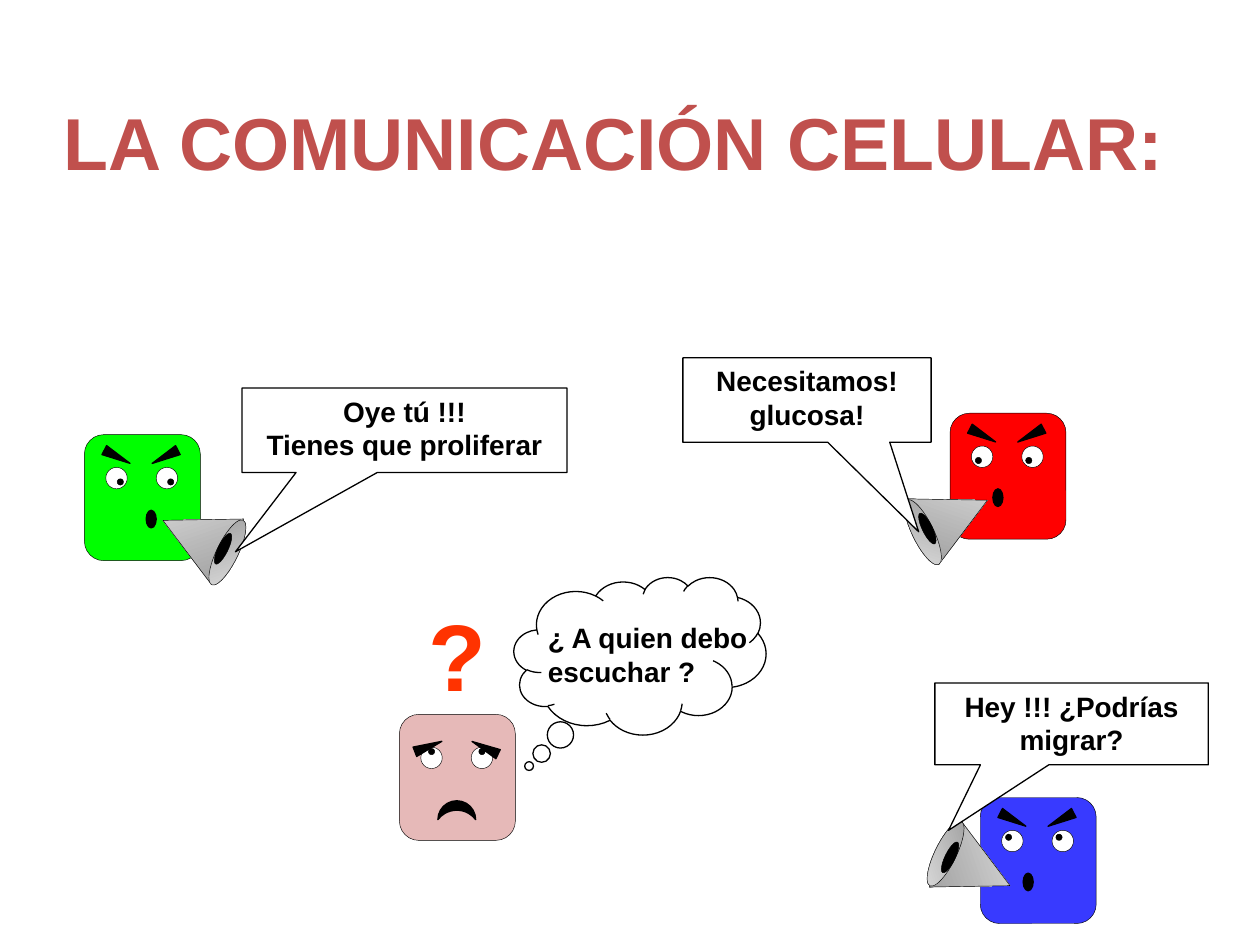
from pptx import Presentation
from pptx.dml.color import RGBColor
from pptx.enum.shapes import MSO_SHAPE
from pptx.enum.text import MSO_ANCHOR, MSO_AUTO_SIZE, PP_ALIGN
from pptx.oxml.ns import qn
from pptx.util import Inches, Pt

TITLE_ONLY = 5
OVAL = MSO_SHAPE.OVAL
TRIANGLE = MSO_SHAPE.ISOSCELES_TRIANGLE
ROUNDED = MSO_SHAPE.ROUNDED_RECTANGLE
MOON = MSO_SHAPE.MOON
SPEECH = MSO_SHAPE.RECTANGULAR_CALLOUT
CLOUD = MSO_SHAPE.CLOUD_CALLOUT
LEFT, CENTER = PP_ALIGN.LEFT, PP_ALIGN.CENTER
TOP = MSO_ANCHOR.TOP
FIXED = MSO_AUTO_SIZE.NONE

FONT = "Arial"
THIN, NORMAL = 0.25, 0.75
FACE_W = 0.92
CONE_W, CONE_H = 0.58, 0.57
COLORS = {
    "title": "C0504D", "question": "FF3300", "black": "000000", "white": "FFFFFF",
    "green": "00FF00", "red": "FF0000", "blue": "383AFF", "pink": "E6B9B8",
    "dark": "9E9E9E", "light": "DDDDDD",
}


def rgb(name):
    return RGBColor.from_string(COLORS[name])


class SlideBuilder:
    def __init__(self, prs):
        self.s = prs.slides.add_slide(prs.slide_layouts[TITLE_ONLY])

    def set_text(self, sp, text, size, color="black", align=CENTER, wrap=True):
        tf = sp.text_frame
        tf.text = text
        tf.word_wrap = wrap
        tf.auto_size = FIXED
        tf.vertical_anchor = TOP
        for p in tf.paragraphs:
            p.alignment = align
            for r in p.runs:
                r.font.name = FONT
                r.font.size = Pt(size)
                r.font.bold = True
                r.font.color.rgb = rgb(color)

    def title(self, text, x, y, w, h):
        sp = self.s.shapes.title
        sp.left, sp.top, sp.width, sp.height = map(Inches, (x, y, w, h))
        self.set_text(sp, text, 42, "title")

    def text(self, text, x, y, w, h, size, color="black", wrap=True):
        sp = self.s.shapes.add_textbox(*map(Inches, (x, y, w, h)))
        self.set_text(sp, text, size, color, LEFT, wrap)

    def shape(self, kind, x, y, w, h, fill="black", line=NORMAL, rot=0, adj=()):
        sp = self.s.shapes.add_shape(kind, *map(Inches, (x, y, w, h)))
        sp.shadow.inherit = False
        sp.rotation = rot
        for i, value in enumerate(adj):
            sp.adjustments[i] = value
        if fill:
            sp.fill.solid()
            sp.fill.fore_color.rgb = rgb(fill)
        else:
            sp.fill.background()
        sp.line.color.rgb = rgb("black")
        sp.line.width = Pt(line)
        return sp

    def metal(self, sp, angle, stops=("dark", "light")):
        sp.fill.gradient()
        sp.fill.gradient_angle = angle
        for stop, color in zip(sp.fill.gradient_stops, stops):
            stop.color.rgb = rgb(color)

    def callout(self, text, x, y, w, h, tail):
        sp = self.shape(SPEECH, x, y, w, h, "white", adj=tail)
        self.set_text(sp, text, 16)

    def face(self, x, y, color, gaze, brows):
        """Head, eyes looking along gaze, and brows given as (dx, dy, rotation)."""
        self.shape(ROUNDED, x, y, FACE_W, 1, color, THIN, adj=[0.167])
        for eye_x in (x + 0.17, x + 0.57):
            self.shape(OVAL, eye_x, y + 0.26, 0.17, 0.17, "white", THIN)
            self.shape(OVAL, eye_x + gaze[0], y + 0.26 + gaze[1], 0.05, 0.05, line=THIN)
        for dx, dy, rot in brows:
            self.shape(TRIANGLE, x + dx, y + dy, 0.08, 0.23, rot=rot)

    def megaphone(self, x, y, flip_h=False, flip_v=False):
        """Cone, bell and hole; x, y is the corner of the unrotated cone."""
        parts = [(TRIANGLE, 0, 0, CONE_W, CONE_H, 296),
                 (OVAL, 0.46, 0.13, 0.17, 0.57, 26),
                 (OVAL, 0.47, 0.25, 0.08, 0.27, 26)]
        drawn = []
        for kind, dx, dy, w, h, rot in parts:
            if flip_h:
                dx = CONE_W - dx - w
            if flip_v:
                dy = CONE_H - dy - h
            if flip_h != flip_v:
                rot = 360 - rot
            sp = self.shape(kind, x + dx, y + dy, w, h, line=THIN, rot=rot)
            xfrm = sp._element.spPr.find(qn("a:xfrm"))
            for name, flipped in (("flipH", flip_h), ("flipV", flip_v)):
                if flipped:
                    xfrm.set(name, "1")
            drawn.append(sp)
        cone, bell, _ = drawn
        if flip_v:
            self.metal(cone, 315, ("light", "dark"))
            self.metal(bell, 45)
        else:
            self.metal(cone, 45)
            self.metal(bell, 315)


def main():
    prs = Presentation()
    prs.slide_width, prs.slide_height = Inches(10), Inches(7.5)
    b = SlideBuilder(prs)

    b.title("LA COMUNICACIÓN CELULAR:", 0.33, 0.72, 9.08, 1.87)

    # Shouting cells: position, colour, gaze, mouth, megaphone offset and flips
    angry = [(0.22, 0.06, 117.3), (0.6, 0.06, 242.7)]
    shouters = [
        (0.67, 3.45, "green", (0.09, 0.09), 0.49, (0.59, 0.52), False, False),
        (7.54, 3.28, "red", (0.03, 0.09), 0.34, (-0.25, 0.53), True, False),
        (7.78, 6.33, "blue", (0.03, 0.03), 0.34, (-0.31, 0.29), True, True),
    ]
    for x, y, color, gaze, mouth_x, cone, flip_h, flip_v in shouters:
        b.face(x, y, color, gaze, angry)
        b.shape(OVAL, x + mouth_x, y + 0.6, 0.08, 0.14)
        b.megaphone(x + cone[0], y + cone[1], flip_h, flip_v)

    # Confused cell
    b.face(3.17, 5.67, "pink", (0.06, 0.01), [(0.19, 0.14, 68.9), (0.64, 0.15, 296.1)])
    b.shape(MOON, 3.55, 6.28, 0.15, 0.3, rot=90, adj=[0.5])
    b.text("?", 3.3, 4.69, 0.66, 1, 54, "question", wrap=False)

    # Speech callouts
    b.callout("Oye tú !!!\nTienes que proliferar", 1.92, 3.08, 2.58, 0.67, (-0.52, 1.44))
    b.callout("Necesitamos! glucosa!", 5.42, 2.84, 1.97, 0.67, (0.45, 1.56))
    b.callout("Hey !!! ¿Podrías migrar?", 7.42, 5.42, 2.17, 0.65, (-0.45, 1.3))

    # Thought cloud
    b.shape(CLOUD, 4.08, 4.58, 2, 1.25, fill=None, adj=(-0.44, 0.7))
    b.text("¿ A quien debo escuchar ?", 4.25, 4.88, 1.83, 0.64, 16)

    prs.save("out.pptx")


if __name__ == "__main__":
    main()
